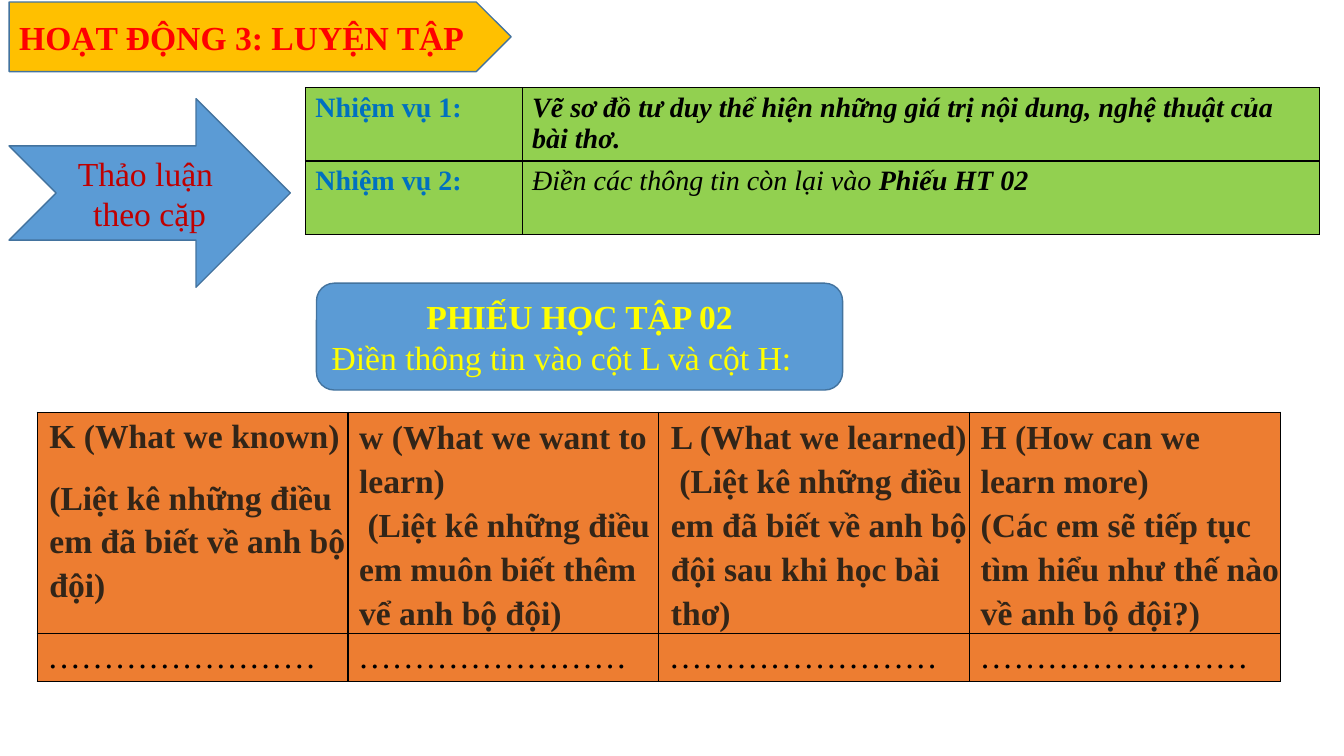
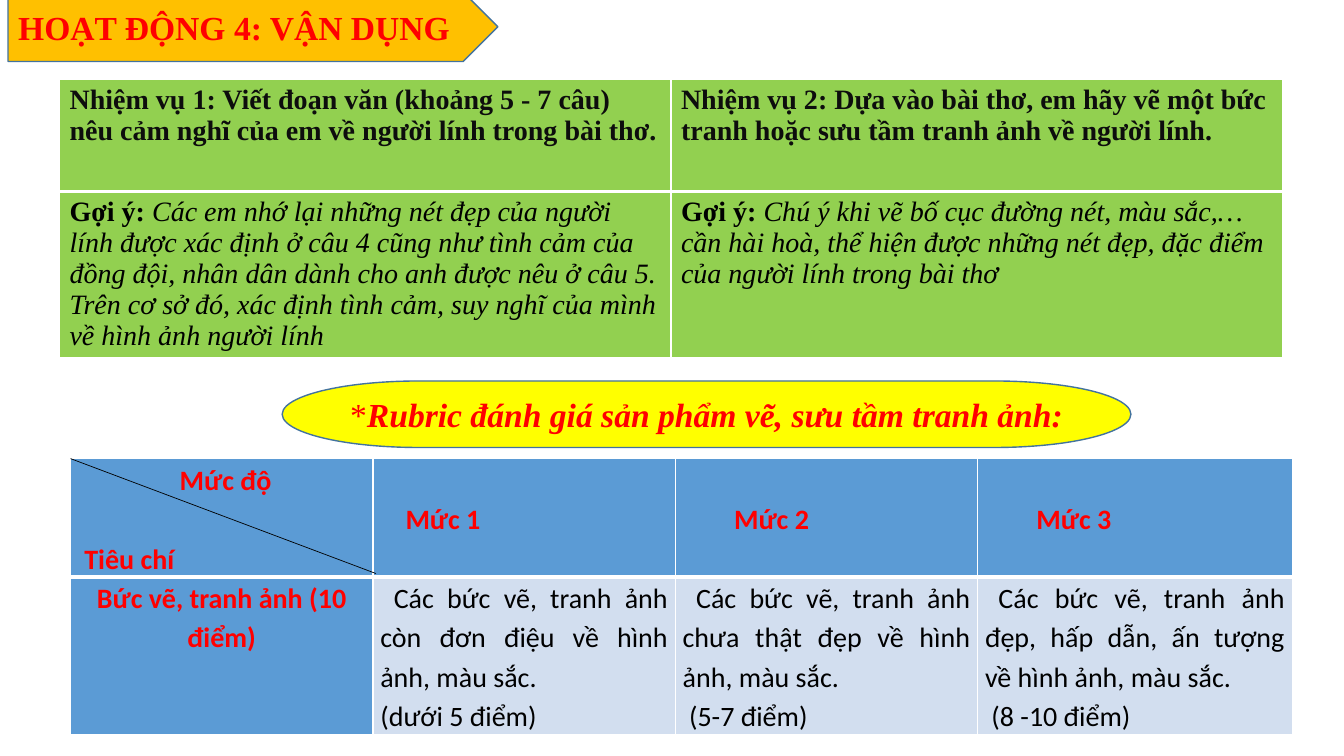
from dataclasses import dataclass, replace

from lxml import etree
from pptx import Presentation
from pptx import util as u
from pptx.dml.color import RGBColor
from pptx.enum import shapes, text
from pptx.oxml.ns import qn

COLUMNS, ROWS = 40, 22.5
UNIT = u.Inches(13.333) / COLUMNS

LEFT, CENTER, JUSTIFY = text.PP_ALIGN.LEFT, text.PP_ALIGN.CENTER, text.PP_ALIGN.JUSTIFY
TOP, MIDDLE, BOTTOM = text.MSO_ANCHOR.TOP, text.MSO_ANCHOR.MIDDLE, text.MSO_ANCHOR.BOTTOM
SHAPE = shapes.MSO_SHAPE


@dataclass(frozen=True)
class Theme:
    serif: str = "Times New Roman"
    sans: str = "Calibri"
    large: int = 24
    medium: int = 20
    black: str = "000000"
    white: str = "FFFFFF"
    ink: str = "0D0D0D"
    brown: str = "322518"
    red: str = "FF0000"
    dark_red: str = "C00000"
    link_blue: str = "0070C0"
    blue: str = "5B9BD5"
    pale_blue: str = "D2DEEF"
    outline: str = "43739E"
    gold: str = "FFC000"
    yellow: str = "FFFF00"
    green: str = "92D050"
    orange: str = "ED7D31"


THEME = Theme()


@dataclass(frozen=True)
class Style:
    color: str = THEME.black
    size: int = THEME.large
    font: str = THEME.serif
    bold: bool = False
    italic: bool = False


@dataclass(frozen=True)
class Para:
    """Spans are (text, Style) pairs; indents are grid columns, before is points."""
    spans: tuple
    align: int = LEFT
    left: float = 0
    first: float = 0
    leading: float = 1
    before: float = 0


@dataclass(frozen=True)
class Cell:
    paras: tuple
    fill: str
    anchor: int = TOP
    insets: tuple = (0.3, 0.15, 0.3, 0.15)


def grid(amount):
    return u.Emu(round(amount * UNIT))


def rgb(color):
    return RGBColor.from_string(color)


def line(words, style, **layout):
    return Para(((words, style),), **layout)


def write(frame, paras):
    for index, spec in enumerate(paras):
        para = frame.add_paragraph() if index else frame.paragraphs[0]
        para.alignment = spec.align
        para.line_spacing = spec.leading
        para.space_before, para.space_after = u.Pt(spec.before), u.Pt(0)
        properties = para._p.get_or_add_pPr()
        properties.set("marL", str(grid(spec.left)))
        properties.set("indent", str(grid(spec.first)))
        for words, style in spec.spans:
            span = para.add_run()
            span.text = words
            font = span.font
            font.name, font.size = style.font, u.Pt(style.size)
            font.bold, font.italic = style.bold, style.italic
            font.color.rgb = rgb(style.color)


def set_borders(cell, color, widths):
    """Widths are points for the left, right, top and bottom sides."""
    properties = cell._tc.get_or_add_tcPr()
    for index, (side, width) in enumerate(zip("LRTB", widths)):
        border = etree.Element(qn(f"a:ln{side}"), w=str(u.Pt(width)))
        fill = etree.SubElement(border, qn("a:solidFill"))
        etree.SubElement(fill, qn("a:srgbClr"), val=color)
        properties.insert(index, border)


class Board:
    """Holds the deck and the slide being drawn; places are in grid units."""

    def __init__(self):
        self.deck = Presentation()
        self.deck.slide_width, self.deck.slide_height = grid(COLUMNS), grid(ROWS)
        self.page = None

    def start(self, title, left, top, width):
        self.page = self.deck.slides.add_slide(self.deck.slide_layouts[5])
        place = left, top, width, 2.07
        banner = self.shape(SHAPE.PENTAGON, place, THEME.gold)
        box = self.page.shapes.title
        box.left, box.top, box.width, box.height = map(grid, place)
        frame = box.text_frame
        frame.word_wrap, frame.auto_size = True, text.MSO_AUTO_SIZE.NONE
        frame.vertical_anchor = MIDDLE
        write(frame, [line(title, Style(THEME.red, bold=True))])
        banner.element.addnext(box.element)

    def shape(self, kind, place, fill, paras=()):
        shape = self.page.shapes.add_shape(kind, *map(grid, place))
        shape.shadow.inherit = False
        shape.fill.solid()
        shape.fill.fore_color.rgb = rgb(fill)
        shape.line.color.rgb = rgb(THEME.outline)
        shape.line.width = u.Pt(1)
        shape.text_frame.word_wrap = True
        shape.text_frame.vertical_anchor = MIDDLE
        write(shape.text_frame, paras)
        return shape

    def table(self, left, top, widths, heights, rows, color, header_rule=1):
        """Header_rule is the weight in points of the line under the first row."""
        size = grid(sum(widths)), grid(sum(heights))
        table = self.page.shapes.add_table(
            len(heights), len(widths), grid(left), grid(top), *size).table
        table.first_row = table.horz_banding = False
        for column, width in zip(table.columns, widths):
            column.width = grid(width)
        for row, height in zip(table.rows, heights):
            row.height = grid(height)
        for r, specs in enumerate(rows):
            for c, spec in enumerate(specs):
                cell = table.cell(r, c)
                cell.fill.solid()
                cell.fill.fore_color.rgb = rgb(spec.fill)
                cell.vertical_anchor = spec.anchor
                (cell.margin_left, cell.margin_top,
                 cell.margin_right, cell.margin_bottom) = map(grid, spec.insets)
                write(cell.text_frame, spec.paras)
                above, below = (1, header_rule) if r == 0 else (header_rule, 1)
                set_borders(cell, color, (1, 1, above, below))

    def rule(self, start, end, color, weight):
        rule = self.page.shapes.add_connector(
            shapes.MSO_CONNECTOR.STRAIGHT, *map(grid, start + end))
        rule.line.color.rgb = rgb(color)
        rule.line.width = u.Pt(weight)
        etree.SubElement(rule.element.spPr, qn("a:effectLst"))


def practice(board):
    board.start("HOẠT ĐỘNG 3: LUYỆN TẬP", 0.27, 0.06, 14.94)

    label = Style(THEME.link_blue, THEME.medium, bold=True)
    hint = Style(size=THEME.medium, italic=True)
    strong = replace(hint, bold=True)
    tasks = [
        ("Nhiệm vụ 1:", (("Vẽ sơ đồ tư duy thể hiện những giá trị nội dung, "
                          "nghệ thuật của bài thơ.", strong),)),
        ("Nhiệm vụ 2:", (("Điền các thông tin còn lại vào ", hint),
                         ("Phiếu HT 02", strong))),
    ]
    board.table(9.09, 2.61, [6.45, 23.73], [2.18] * 2,
                [[Cell((line(name, label),), THEME.green),
                  Cell((Para(spans),), THEME.green)] for name, spans in tasks],
                THEME.black)

    pair = Style(THEME.dark_red)
    board.shape(SHAPE.NOTCHED_RIGHT_ARROW, (0.27, 2.94, 8.37, 5.61), THEME.blue,
                [line(words, pair, align=CENTER) for words in ("Thảo luận ", "theo cặp")])

    sheet = Style(THEME.yellow)
    board.shape(SHAPE.ROUNDED_RECTANGLE, (9.42, 8.43, 15.66, 3.18), THEME.blue,
                [line("PHIẾU HỌC TẬP 02", replace(sheet, bold=True), align=CENTER),
                 line("Điền thông tin vào cột L và cột H:", sheet)])

    heading = Style(THEME.brown, bold=True)
    # Heading, guide, anchor, indent, first-line indent, leading, space before
    columns = [
        ("K (What we known)", "(Liệt kê những điều em đã biết về anh bộ đội)",
         TOP, 0.33, 0, 1.17, 13),
        ("w (What we want to learn)",
         "(Liệt kê những điều em muôn biết thêm vể anh bộ đội)",
         MIDDLE, 0.3, 0.25, 1.19, 0),
        ("L (What we learned)",
         "(Liệt kê những điều em đã biết về anh bộ đội sau khi học bài thơ)",
         MIDDLE, 0.33, 0.25, 1.19, 0),
        ("H (How can we learn more)",
         "(Các em sẽ tiếp tục tìm hiểu như thế nào về anh bộ đội?)",
         BOTTOM, 0.3, 0, 1.19, 0),
    ]
    headings = [
        Cell((line(name, heading, left=left, leading=leading),
              line(guide, heading, left=left, first=first,
                   leading=leading, before=before)),
             THEME.orange, anchor, (0.03, 0, 0, 0))
        for name, guide, anchor, left, first, leading, before in columns]
    blanks = [Cell((line("……………………", Style()),), THEME.orange)] * len(columns)
    board.table(1.11, 12.27, [9.25] * len(columns), [6.57, 1.44],
                [headings, blanks], THEME.black)


def application(board):
    board.start("HOẠT ĐỘNG 4: VẬN DỤNG", 0.24, -0.24, 14.58)

    task = Style(THEME.ink, THEME.medium, bold=True)
    tip = Style(size=THEME.medium, bold=True)
    advice = Style(size=THEME.medium, italic=True)
    tasks = ("Nhiệm vụ 1: Viết đoạn văn (khoảng 5 - 7 câu) nêu cảm nghĩ của em "
             "về người lính trong bài thơ.",
             "Nhiệm vụ 2: Dựa vào bài thơ, em hãy vẽ một bức tranh hoặc sưu tầm "
             "tranh ảnh về người lính.")
    tips = ("Các em nhớ lại những nét đẹp của người lính được xác định ở câu 4 "
            "cũng như tình cảm của đồng đội, nhân dân dành cho anh được nêu ở câu 5. "
            "Trên cơ sở đó, xác định tình cảm, suy nghĩ của mình về hình ảnh người lính",
            "Chú ý khi vẽ bố cục đường nét, màu sắc,…cần hài hoà, thể hiện được "
            "những nét đẹp, đặc điểm của người lính trong bài thơ")
    board.table(1.77, 2.37, [18.2] * 2, [3.33, 4.95],
                [[Cell((line(words, task),), THEME.green) for words in tasks],
                 [Cell((Para((("Gợi ý: ", tip), (words, advice))),), THEME.green)
                  for words in tips]],
                THEME.white, header_rule=3)

    star = Style(THEME.red)
    board.shape(SHAPE.FLOWCHART_TERMINATOR, (8.4, 11.34, 25.26, 1.98), THEME.yellow,
                [Para((("*", star),
                       ("Rubric đánh giá sản phẩm vẽ, sưu tầm tranh ảnh:",
                        replace(star, bold=True, italic=True))), align=CENTER)])

    label = Style(THEME.red, THEME.medium, THEME.sans, bold=True)
    body = Style(size=THEME.medium, font=THEME.sans)
    insets = (0.22, 0, 0.22, 0)
    # Level, indent of its name, description, score, indent of the score
    levels = [
        ("Mức 1", 0.75, "Các bức vẽ, tranh ảnh còn đơn điệu về hình ảnh, màu sắc.",
         "(dưới 5 điểm)", 0),
        ("Mức 2", 1.53, "Các bức vẽ, tranh ảnh chưa thật đẹp về hình ảnh, màu sắc.",
         "(5-7 điểm)", 0.19),
        ("Mức 3", 1.53, "Các bức vẽ, tranh ảnh đẹp, hấp dẫn, ấn tượng về hình ảnh, màu sắc.",
         "(8 -10 điểm)", 0.19),
    ]
    corner = Cell((line("Mức độ", label, left=3.03, leading=1.15),
                   line("Tiêu chí", label, left=0.19, leading=1.15, before=28)),
                  THEME.blue, insets=insets)
    criterion = Cell((line("Bức vẽ, tranh ảnh (10 điểm)", label,
                           align=CENTER, leading=1.15),), THEME.blue, insets=insets)
    names = [Cell((line(name, label, left=left, leading=1.15),),
                  THEME.blue, MIDDLE, insets) for name, left, *_ in levels]
    scores = [Cell((line(words, body, align=JUSTIFY, first=0.4, leading=1.15),
                    line(score, body, align=JUSTIFY, first=first, leading=1.15)),
                   THEME.pale_blue, insets=insets)
              for _, _, words, score, first in levels]
    board.table(2.1, 13.65, [9, 9, 9, 9.36], [3.5, 4.7],
                [[corner, *names], [criterion, *scores]], THEME.white, header_rule=3)
    board.rule((2.1, 13.65), (11.19, 17.07), THEME.black, 0.5)


def main():
    board = Board()
    practice(board)
    application(board)
    board.deck.save("out.pptx")


if __name__ == "__main__":
    main()
